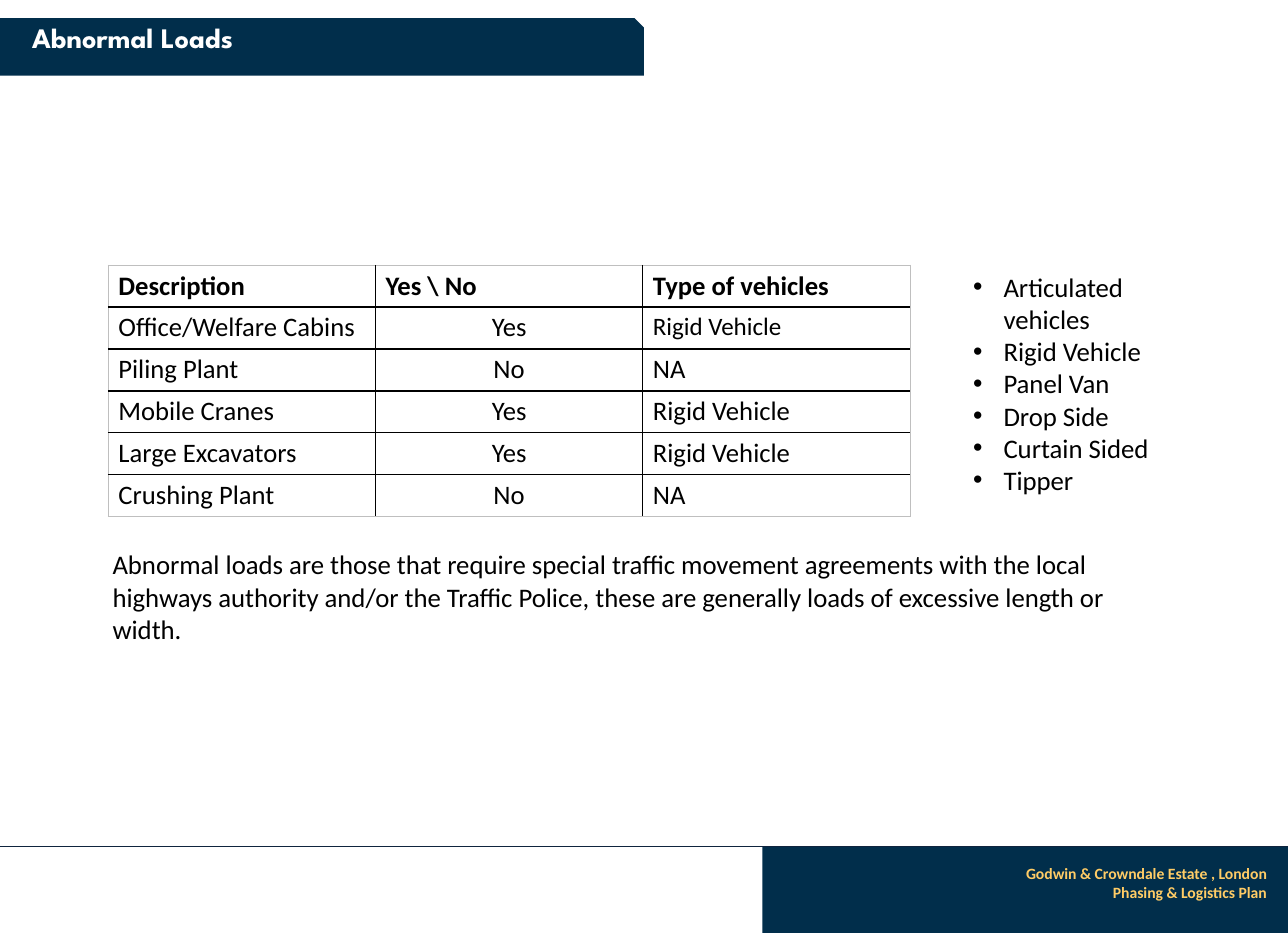
from dataclasses import dataclass

from lxml.etree import SubElement
from pptx import Presentation
from pptx.dml.color import RGBColor
from pptx.enum.shapes import MSO_CONNECTOR, MSO_SHAPE
from pptx.enum.text import PP_ALIGN
from pptx.oxml.ns import qn
from pptx.slide import Slide
from pptx.table import _Cell
from pptx.text.text import Font
from pptx.util import Inches, Pt

NAVY, BLACK, WHITE, GOLD, GREY = "012E4B", "000000", "FFFFFF", "FFCC66", "BFBFBF"
SLIDE_WIDTH, SLIDE_HEIGHT = 11.42, 8.27
FOOTER_TOP = 7.5


@dataclass
class Box:
    left: float
    top: float
    width: float
    height: float

    def lengths(self) -> tuple:
        return tuple(Inches(v) for v in (self.left, self.top, self.width, self.height))


@dataclass
class Band:
    preset: MSO_SHAPE
    box: Box


@dataclass
class TextBlock:
    lines: list[str]
    box: Box
    size: float = 17.1
    color: str = BLACK
    font_name: str = "Calibri"
    bold: bool = False
    align: PP_ALIGN = PP_ALIGN.LEFT
    bulleted: bool = False


BANDS = [
    Band(MSO_SHAPE.RECTANGLE,
         Box(6.76, FOOTER_TOP, SLIDE_WIDTH - 6.76, SLIDE_HEIGHT - FOOTER_TOP)),
    Band(MSO_SHAPE.SNIP_1_RECTANGLE, Box(0, 0.16, 5.71, 0.51)),
]

TEXT_BLOCKS = [
    TextBlock(["Godwin & Crowndale Estate , London", "Phasing & Logistics Plan"],
              Box(6.82, 7.61, 4.51, 0.44), size=10, color=GOLD, bold=True,
              align=PP_ALIGN.RIGHT),
    TextBlock(["Articulated vehicles", "Rigid Vehicle", "Panel Van", "Drop Side",
               "Curtain Sided", "Tipper"],
              Box(8.53, 2.35, 2.17, 2.12), bulleted=True),
    TextBlock(["Abnormal Loads"], Box(0, 0.13, 2.35, 0.55), size=18, color=WHITE,
              font_name="League Spartan", bold=True, align=PP_ALIGN.CENTER),
    TextBlock(["Abnormal loads are those that require special traffic movement "
               "agreements with the local highways authority and/or the Traffic "
               "Police, these are generally loads of excessive length or width."],
              Box(0.9, 4.81, 9.63, 0.97)),
]

LOADS_BOX = Box(0.96, 2.35, 7.11, 2.23)
LOADS = [
    ("Description", "Yes \\ No", "Type of vehicles"),
    ("Office/Welfare Cabins", "Yes", "Rigid Vehicle"),
    ("Piling Plant", "No", "NA"),
    ("Mobile Cranes", "Yes", "Rigid Vehicle"),
    ("Large Excavators", "Yes", "Rigid Vehicle"),
    ("Crushing Plant", "No", "NA"),
]


def rgb(value: str) -> RGBColor:
    return RGBColor.from_string(value)


def style_font(font: Font, name: str, size: float, color: str, bold: bool) -> None:
    font.name, font.size, font.bold = name, Pt(size), bold
    font.color.rgb = rgb(color)


def add_band(slide: Slide, band: Band) -> None:
    shape = slide.shapes.add_shape(band.preset, *band.box.lengths())
    shape.shadow.inherit = False
    shape.fill.solid()
    shape.fill.fore_color.rgb = rgb(NAVY)
    shape.line.fill.background()


def add_footer_rule(slide: Slide) -> None:
    rule = slide.shapes.add_connector(MSO_CONNECTOR.STRAIGHT, 0, Inches(FOOTER_TOP),
                                      Inches(SLIDE_WIDTH), Inches(FOOTER_TOP))
    rule.line.color.rgb = rgb("0F243E")
    rule.line.width = Pt(0.75)
    SubElement(rule._element.spPr, qn("a:effectLst"))


def add_text(slide: Slide, block: TextBlock) -> None:
    frame = slide.shapes.add_textbox(*block.box.lengths()).text_frame
    frame.word_wrap = True
    frame.text = "\n".join(block.lines)
    for paragraph in frame.paragraphs:
        paragraph.alignment = block.align
        if block.bulleted:
            properties = paragraph._p.get_or_add_pPr()
            properties.set("marL", str(Inches(0.27)))
            properties.set("indent", str(-Inches(0.27)))
            SubElement(properties, qn("a:buFont"), typeface="Arial")
            SubElement(properties, qn("a:buChar"), char="•")
        for run in paragraph.runs:
            style_font(run.font, block.font_name, block.size, block.color, block.bold)


def set_borders(cell: _Cell, outer_sides: dict[str, bool]) -> None:
    """Draw black inner lines and a fine grey line on the table's outer sides."""
    properties = cell._tc.get_or_add_tcPr()
    for position, (side, is_outer) in enumerate(outer_sides.items()):
        line = properties.makeelement(
            qn(f"a:{side}"), {"w": str(Pt(0.5 if is_outer else 1))})
        fill = SubElement(line, qn("a:solidFill"))
        SubElement(fill, qn("a:srgbClr"), val=GREY if is_outer else BLACK)
        properties.insert(position, line)


def add_loads_table(slide: Slide) -> None:
    row_count, column_count = len(LOADS), len(LOADS[0])
    table = slide.shapes.add_table(row_count, column_count, *LOADS_BOX.lengths()).table
    table.first_row = table.horz_banding = False
    for r, row in enumerate(LOADS):
        for c, label in enumerate(row):
            cell = table.cell(r, c)
            cell.fill.background()
            cell.margin_left = cell.margin_right = Inches(0.09)
            cell.margin_top = cell.margin_bottom = Inches(0.04)
            cell.text_frame.text = label
            paragraph = cell.text_frame.paragraphs[0]
            paragraph.alignment = PP_ALIGN.CENTER if r and c == 1 else PP_ALIGN.LEFT
            size = 16 if (r, c) == (1, 2) else 17
            style_font(paragraph.runs[0].font, "Calibri", size, BLACK, r == 0)
            set_borders(cell, {"lnL": c == 0, "lnR": c == column_count - 1,
                               "lnT": r == 0, "lnB": r == row_count - 1})


def main() -> None:
    presentation = Presentation()
    presentation.slide_width = Inches(SLIDE_WIDTH)
    presentation.slide_height = Inches(SLIDE_HEIGHT)
    slide = presentation.slides.add_slide(presentation.slide_layouts[6])
    for band in BANDS:
        add_band(slide, band)
    add_footer_rule(slide)
    add_loads_table(slide)
    for block in TEXT_BLOCKS:
        add_text(slide, block)
    presentation.save("out.pptx")


if __name__ == "__main__":
    main()
